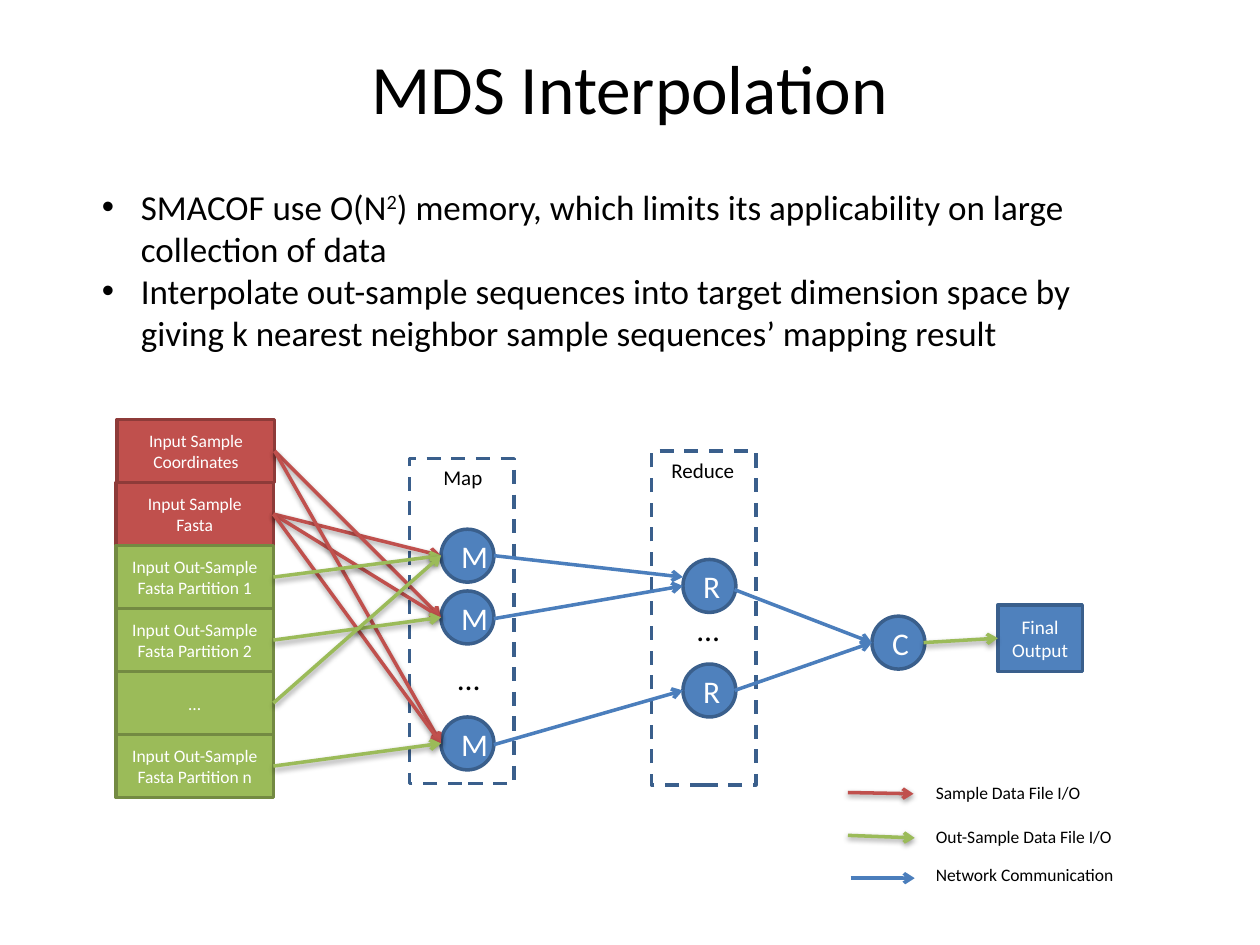
import pptx
import pptx.util
from lxml import etree
from pptx.dml.color import RGBColor
from pptx.enum.dml import MSO_LINE
from pptx.enum.shapes import MSO_CONNECTOR, MSO_SHAPE
from pptx.enum.text import MSO_ANCHOR, MSO_AUTO_SIZE, PP_ALIGN
from pptx.oxml import parse_xml
from pptx.oxml.ns import nsdecls, qn
from pptx.util import Inches

BLACK = RGBColor(0x00, 0x00, 0x00)
WHITE = RGBColor(0xFF, 0xFF, 0xFF)
RED = RGBColor(0xC0, 0x50, 0x4D)
MAROON = RGBColor(0x8E, 0x3B, 0x39)
GREEN = RGBColor(0x9B, 0xBB, 0x59)
OLIVE = RGBColor(0x73, 0x8A, 0x42)
BLUE = RGBColor(0x4F, 0x81, 0xBD)
NAVY = RGBColor(0x3A, 0x5F, 0x8C)
AZURE = RGBColor(0x4B, 0x7E, 0xBC)

SHADOW = (
    f'<a:effectLst {nsdecls("a")}>'
    '<a:outerShdw blurRad="40000" dist="20000" dir="5400000" rotWithShape="0">'
    '<a:srgbClr val="000000"><a:alpha val="38000"/></a:srgbClr>'
    '</a:outerShdw></a:effectLst>'
)
PLAIN = f'<a:effectLst {nsdecls("a")}/>'


def write(frame, text, size=10, color=BLACK, font="Calibri",
          align=PP_ALIGN.LEFT, anchor=MSO_ANCHOR.TOP, bullet=None):
    """Fill a frame, one paragraph a line; text between ^ marks is raised."""
    frame.word_wrap = True
    frame.vertical_anchor = anchor
    for row, line in enumerate(text.split("\n")):
        para = frame.add_paragraph() if row else frame.paragraphs[0]
        para.alignment = align
        if bullet:
            props = para._p.get_or_add_pPr()
            props.set("marL", str(Inches(0.31)))
            props.set("indent", str(Inches(-0.31)))
            etree.SubElement(props, qn("a:buFont")).set("typeface", "Arial")
            etree.SubElement(props, qn("a:buChar")).set("char", bullet)
        for part, words in enumerate(line.split("^")):
            run = para.add_run()
            run.text = words
            run.font.size = pptx.util.Pt(size)
            run.font.name = font
            run.font.color.rgb = color
            if part % 2:
                run._r.get_or_add_rPr().set("baseline", "30000")


class Board:
    """Holds the line style and the current slide."""

    def __init__(self, slide, width=2):
        self.shapes = slide.shapes
        self.width = pptx.util.Pt(width)

    def label(self, text, x, y, w, h, grow=True, **style):
        box = self.shapes.add_textbox(Inches(x), Inches(y), Inches(w), Inches(h))
        write(box.text_frame, text, **style)
        if grow:
            box.text_frame.auto_size = MSO_AUTO_SIZE.SHAPE_TO_FIT_TEXT

    def shape(self, kind, x, y, w, h, edge, fill=None):
        item = self.shapes.add_shape(kind, Inches(x), Inches(y), Inches(w), Inches(h))
        item.shadow.inherit = False
        item.line.color.rgb = edge
        item.line.width = self.width
        if fill is None:
            item.fill.background()
        else:
            item.fill.solid()
            item.fill.fore_color.rgb = fill
        return item

    def block(self, text, x, y, w, h, fill, edge, size=10):
        item = self.shape(MSO_SHAPE.RECTANGLE, x, y, w, h, edge, fill)
        write(item.text_frame, text, size=size, color=WHITE,
              align=PP_ALIGN.CENTER, anchor=MSO_ANCHOR.MIDDLE)
        return item

    def node(self, text, x, y, d=0.42):
        item = self.shape(MSO_SHAPE.OVAL, x, y, d, d, NAVY, BLUE)
        write(item.text_frame, text, size=18, color=WHITE,
              align=PP_ALIGN.CENTER, anchor=MSO_ANCHOR.MIDDLE)

    def stage(self, x, y, w, h):
        item = self.shape(MSO_SHAPE.RECTANGLE, x, y, w, h, NAVY)
        item.line.dash_style = MSO_LINE.DASH

    def arrow(self, start, end, color, source=None, target=None):
        """Draw an arrow; source joins at its right side, target at its left."""
        link = self.shapes.add_connector(
            MSO_CONNECTOR.STRAIGHT, *(Inches(v) for v in (*start, *end)))
        if source is not None:
            link.begin_connect(source, 3)
        if target is not None:
            link.end_connect(target, 1)
        link.line.color.rgb = color
        link.line.width = self.width
        tip = etree.SubElement(link.line._get_or_add_ln(), qn("a:tailEnd"))
        tip.set("type", "arrow")
        link._element.spPr.append(parse_xml(PLAIN if color == AZURE else SHADOW))


def main():
    deck = pptx.Presentation()
    deck.slide_width, deck.slide_height = Inches(10), Inches(7.5)
    board = Board(deck.slides.add_slide(deck.slide_layouts[6]))

    # Title and points
    board.label("MDS Interpolation", 0.5, 0.3, 9, 0.78, grow=False, size=39.6,
                align=PP_ALIGN.CENTER, anchor=MSO_ANCHOR.MIDDLE)
    board.label(
        "SMACOF use O(N^2^) memory, which limits its applicability on large "
        "collection of data\n"
        "Interpolate out-sample sequences into target dimension space by "
        "giving k nearest neighbor sample sequences’ mapping result",
        0.71, 1.42, 8.38, 1.45, size=20, bullet="•")

    # Map and reduce stages
    board.stage(3.25, 3.64, 0.83, 2.58)
    board.stage(5.17, 3.58, 0.83, 2.65)
    board.label("Map", 3.42, 3.64, 0.75, 0.3, size=12)
    board.label("Reduce", 5.23, 3.58, 0.75, 0.3, size=12)

    # Input files
    names = ["Input Sample Coordinates", "Input Sample Fasta",
             "Input Out-Sample Fasta Partition 1",
             "Input Out-Sample Fasta Partition 2", "…",
             "Input Out-Sample Fasta Partition n"]
    files = []
    for row, name in enumerate(names):
        fill, edge = (RED, MAROON) if row < 2 else (GREEN, OLIVE)
        left = 0.92 if row else 0.93
        files.append(board.block(name, left, 3.33 + 0.5 * row, 1.25, 0.5, fill, edge))

    # Nodes
    for top in (4.2, 4.69, 5.69):
        board.node("M", 3.5, top)
    for top in (4.44, 5.27):
        board.node("R", 5.42, top)
    board.node("C", 6.92, 4.89)
    for x, y in ((3.43, 5.18), (5.33, 4.79)):
        board.label("…", x, y, 0.58, 0.4, size=18, align=PP_ALIGN.CENTER)
    final = board.block("Final Output", 7.92, 4.8, 0.67, 0.53, BLUE, NAVY, size=11)

    # File reads: input row to height of its map node
    reads = [(1, 4.41), (0, 4.9), (1, 4.9), (0, 5.9), (1, 5.9),
             (2, 4.41), (3, 4.9), (5, 5.9), (4, 4.41)]
    for row, y in reads:
        board.arrow((2.17, 3.58 + 0.5 * row), (3.5, y),
                    RED if row < 2 else GREEN, source=files[row])

    # Network transfers and final write
    for y, end in ((4.41, 4.58), (4.91, 4.65), (5.91, 5.48)):
        board.arrow((3.92, y), (5.42, end), AZURE)
    for y in (5.48, 4.68):
        board.arrow((5.83, y), (6.92, 5.1), AZURE)
    board.arrow((7.33, 5.1), (7.92, 5.07), GREEN, target=final)

    # Legend
    legend = [
        ("Sample Data File I/O", 6.16, (6.73, 6.29), (7.25, 6.3), RED),
        ("Out-Sample Data File I/O", 6.51, (6.73, 6.63), (7.26, 6.65), GREEN),
        ("Network Communication", 6.81, (6.75, 6.97), (7.26, 6.97), AZURE),
    ]
    for name, top, start, end, color in legend:
        board.arrow(start, end, color)
        board.label(name, 7.33, top, 1.83, 0.27)

    deck.save("out.pptx")


if __name__ == "__main__":
    main()
